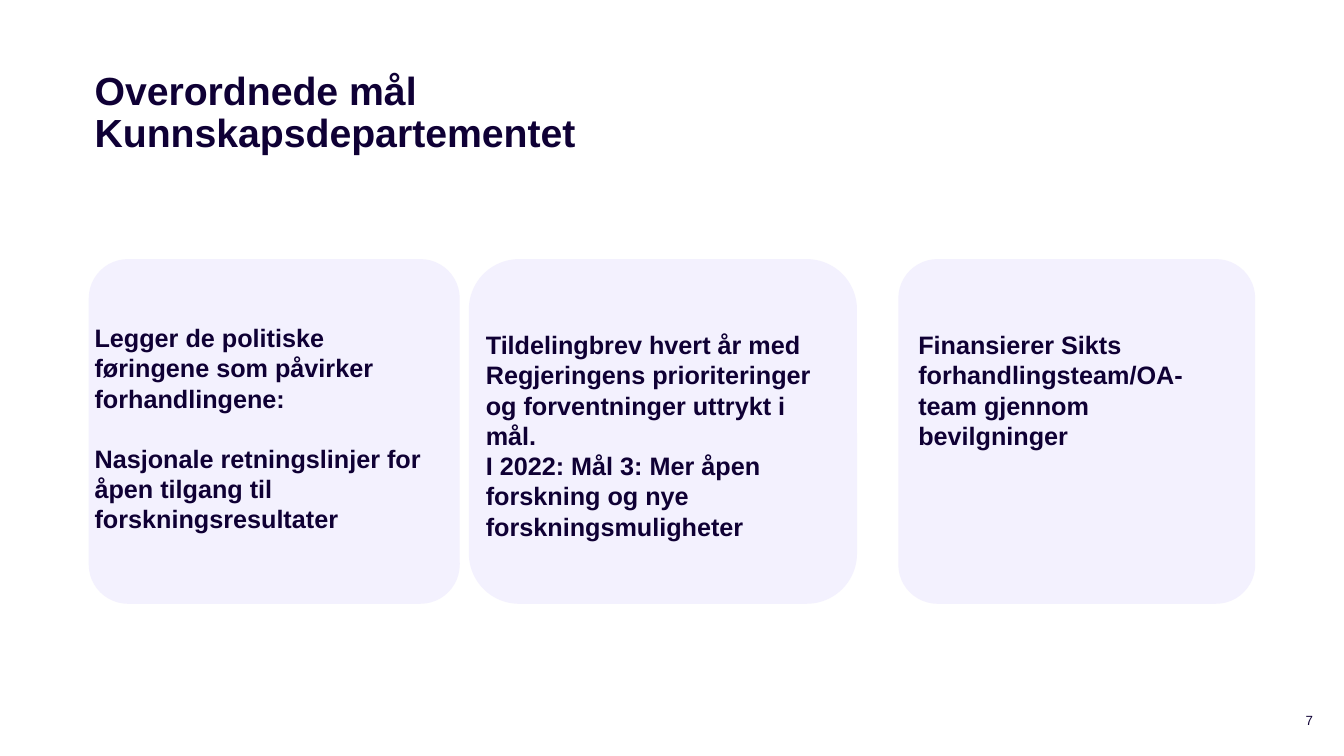
from pptx import Presentation
from pptx.dml.color import RGBColor
from pptx.enum.shapes import MSO_SHAPE
from pptx.enum.text import MSO_ANCHOR, PP_ALIGN
from pptx.util import Inches, Pt

ROUNDED = MSO_SHAPE.ROUNDED_RECTANGLE
TOP, MIDDLE, BOTTOM = MSO_ANCHOR.TOP, MSO_ANCHOR.MIDDLE, MSO_ANCHOR.BOTTOM
LEFT, RIGHT = PP_ALIGN.LEFT, PP_ALIGN.RIGHT

TITLE = "Overordnede mål\vKunnskapsdepartementet"
PAGE_NUMBER = "7"
CARD_TOP, CARD_HEIGHT = 2.57, 3.42
CARDS = [
    {"left": 0.88, "width": 3.68, "corner": 0.114,
     "text_box": (0.84, 3.15, 3.66, 2.52), "gap": 21.5,
     "goals": ["Legger de politiske føringene som påvirker forhandlingene:",
               "Nasjonale retningslinjer for åpen tilgang til forskningsresultater"]},
    {"left": 4.65, "width": 3.85, "corner": 0.146,
     "text_box": (4.72, 3.22, 3.72, 2.22), "gap": 0,
     "goals": ["Tildelingbrev hvert år med Regjeringens prioriteringer og forventninger uttrykt i mål.",
               "I 2022: Mål 3: Mer åpen forskning og nye forskningsmuligheter"]},
    {"left": 8.91, "width": 3.54, "corner": 0.114,
     "text_box": (9.01, 3.22, 3.37, 1.31), "gap": 0,
     "goals": ["Finansierer Sikts forhandlingsteam/OA-team gjennom bevilgninger"]},
]
INK, CARD_INK, CARD_FILL = "0F0035", "0F0034", "F3F1FE"


def color(hex_value):
    return RGBColor.from_string(hex_value)


def add_text(slide, box, lines, size, ink, bold=True, anchor=TOP, align=LEFT,
             gap=0, line_spacing=None, bottom_inset=0.05):
    frame = slide.shapes.add_textbox(*map(Inches, box)).text_frame
    frame.word_wrap = True
    frame.vertical_anchor = anchor
    frame.margin_bottom = Inches(bottom_inset)
    for index, line in enumerate(lines):
        paragraph = frame.add_paragraph() if index else frame.paragraphs[0]
        paragraph.text = line
        paragraph.alignment = align
        if index and gap:
            paragraph.space_before = Pt(gap)
        if line_spacing:
            paragraph.line_spacing = line_spacing
        paragraph.font.name = "Arial"
        paragraph.font.size = Pt(size)
        paragraph.font.bold = bold
        paragraph.font.color.rgb = color(ink)


def add_card(slide, card):
    panel = slide.shapes.add_shape(
        ROUNDED, Inches(card["left"]), Inches(CARD_TOP),
        Inches(card["width"]), Inches(CARD_HEIGHT))
    panel.adjustments[0] = card["corner"]
    panel.shadow.inherit = False
    panel.fill.solid()
    panel.fill.fore_color.rgb = color(CARD_FILL)
    panel.line.fill.background()
    add_text(slide, card["text_box"], card["goals"], 18, CARD_INK, gap=card["gap"])


def main():
    deck = Presentation()
    deck.slide_width, deck.slide_height = Inches(13.33), Inches(7.5)
    slide = deck.slides.add_slide(deck.slide_layouts[6])
    add_text(slide, (0.84, 0.57, 6.54, 1.5), [TITLE], 28, INK,
             anchor=BOTTOM, line_spacing=0.9, bottom_inset=0.52)
    for card in CARDS:
        add_card(slide, card)
    add_text(slide, (10.12, 6.95, 3, 0.4), [PAGE_NUMBER], 9.5, INK,
             bold=False, anchor=MIDDLE, align=RIGHT)
    deck.save("out.pptx")


if __name__ == "__main__":
    main()
